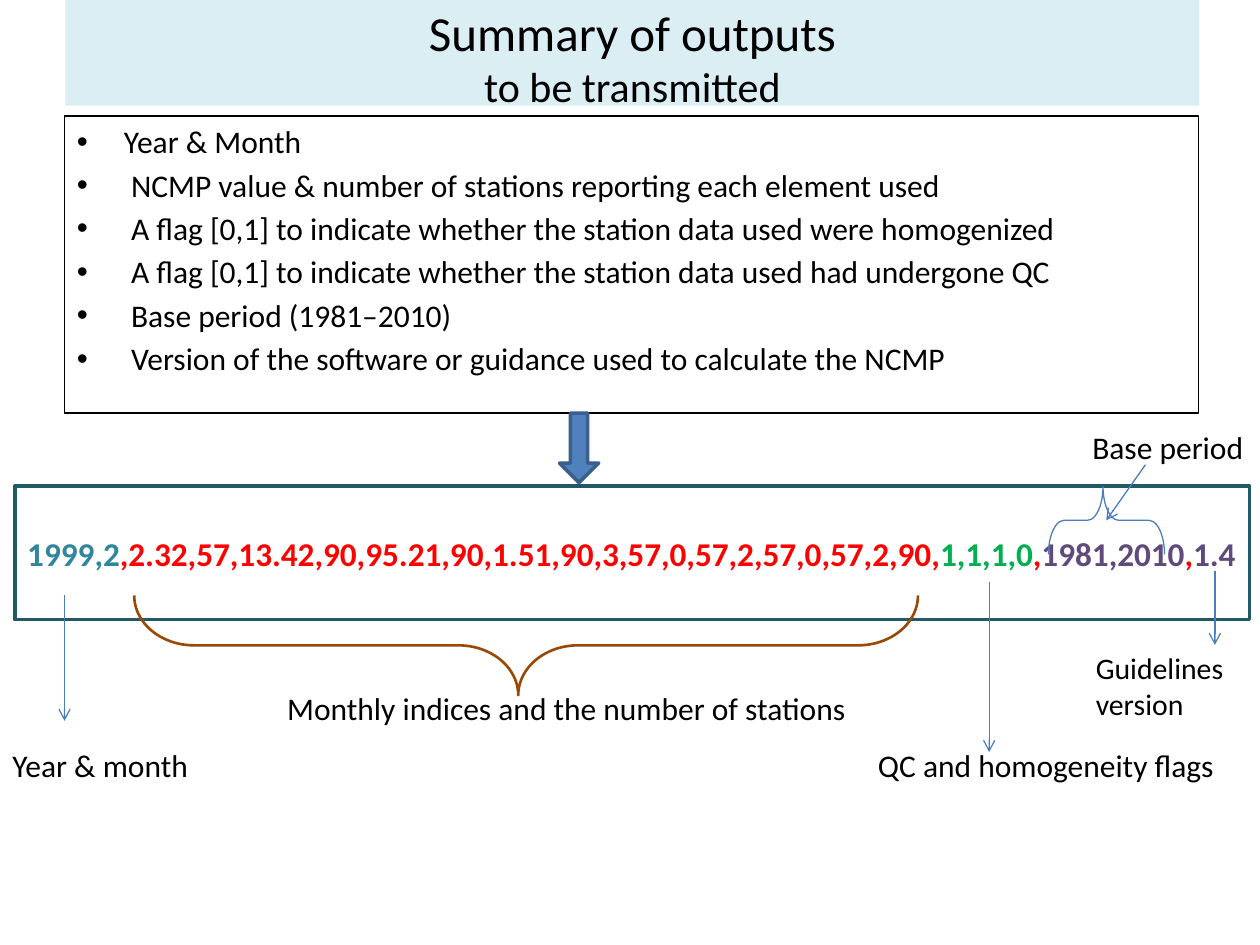
from lxml import etree
from pptx import Presentation
from pptx.dml.color import RGBColor
from pptx.enum.shapes import MSO_CONNECTOR, MSO_SHAPE
from pptx.enum.text import MSO_ANCHOR, PP_ALIGN
from pptx.oxml.ns import qn
from pptx.util import Cm, Pt

RECT = MSO_SHAPE.RECTANGLE
MID, TOP = MSO_ANCHOR.MIDDLE, MSO_ANCHOR.TOP
LEFT, CENTER = PP_ALIGN.LEFT, PP_ALIGN.CENTER
HEX = {
    "black": "000000", "pale": "DBEEF4", "frame": "215968", "teal": "31859C",
    "red": "FF0000", "green": "00B050", "violet": "604A7B", "brown": "984807",
    "blue": "4F81BD", "edge": "3A5F8C", "thin": "4B7EBC",
}
RGB = {name: RGBColor.from_string(code) for name, code in HEX.items()}

prs = Presentation()
prs.slide_width, prs.slide_height = Cm(25.4), Cm(19.05)
slide = prs.slides.add_slide(prs.slide_layouts[6])


def add_box(kind, place, fill=None, line=None, width=0.75, turn=0, adjust=()):
    """Add a preset shape; place is left, top, width, height in cm."""
    box = slide.shapes.add_shape(kind, *map(Cm, place))
    box.shadow.inherit = False
    box.rotation = turn
    for i, part in enumerate(adjust):
        box.adjustments[i] = part
    if fill:
        box.fill.solid()
        box.fill.fore_color.rgb = RGB[fill]
    else:
        box.fill.background()
    if line:
        box.line.color.rgb = RGB[line]
        box.line.width = Pt(width)
    else:
        box.line.fill.background()
    return box


def add_lines(frame, lines, anchor=TOP, align=LEFT):
    """Fill a text frame with (text, size) lines and return its paragraphs."""
    frame.vertical_anchor = anchor
    for i, (text, size) in enumerate(lines):
        para = frame.add_paragraph() if i else frame.paragraphs[0]
        para.text = text
        para.alignment = align
        para.font.name = "Calibri"
        para.font.size = Pt(size)
        para.font.color.rgb = RGB["black"]
    return frame.paragraphs


# Title
title = add_box(RECT, (1.32, 0, 22.86, 2.13), fill="pale").text_frame
title.margin_top, title.margin_bottom = Cm(0.16), Cm(0)
add_lines(title, [("Summary of outputs", 28), ("to be transmitted", 24)], MID, CENTER)

# List of outputs
items = [
    "Year & Month",
    " NCMP value & number of stations reporting each element used",
    " A flag [0,1] to indicate whether the station data used were homogenized",
    " A flag [0,1] to indicate whether the station data used had undergone QC",
    " Base period (1981–2010)",
    " Version of the software or guidance used to calculate the NCMP",
]
body = add_box(RECT, (1.3, 2.34, 22.86, 5.99), line="black").text_frame
for para in add_lines(body, [(item, 18) for item in items]):
    para.space_before = Pt(3.2)
    props = para._p.get_or_add_pPr()
    props.set("marL", str(Cm(0.95)))
    props.set("indent", str(-Cm(0.95)))
    font = etree.Element(qn("a:buFont"), typeface="Arial")
    mark = etree.Element(qn("a:buChar"), char="•")
    props.find(qn("a:defRPr")).addprevious(font)
    font.addnext(mark)

# Sample record
fields = [
    ("1999,2", "teal"),
    (",2.32,57,13.42,90,95.21,90,1.51,90,3,57,0,57,2,57,0,57,2,90,", "red"),
    ("1,1,1,0", "green"), (",", "red"),
    ("1981,2010", "violet"), (",", "red"), ("1.4", "violet"),
]
record = add_box(RECT, (0.3, 9.8, 24.89, 2.69), line="frame", width=2.25).text_frame
record.margin_right = Cm(0)
para = add_lines(record, [("", 19)], MID)[0]
para.font.bold = True
for text, color in fields:
    run = para.add_run()
    run.text = text
    run.font.color.rgb = RGB[color]

# Block arrow and braces
add_box(MSO_SHAPE.DOWN_ARROW, (11.28, 8.33, 0.79, 1.4), "blue", "edge", 2,
        adjust=(0.44, 0.5))
add_box(MSO_SHAPE.RIGHT_BRACE, (9.6, 5.11, 2.01, 15.8), line="brown", width=1.5,
        turn=90, adjust=(0.6, 0.51))
add_box(MSO_SHAPE.LEFT_BRACE, (21.62, 9.32, 1.37, 2.34), line="thin",
        turn=90, adjust=(0.23, 0.53))

# Labels
labels = [
    (["Monthly indices and the number of stations"], 18, (5.54, 13.77, 11.91, 1.02)),
    (["QC and homogeneity flags"], 18, (17.45, 14.91, 7.37, 1.02)),
    (["Year & month"], 18, (0, 14.91, 4.09, 1.02)),
    (["Base period"], 18, (21.77, 8.51, 3.58, 1.02)),
    (["Guidelines", "version"], 17, (21.84, 12.98, 3.23, 1.7)),
]
for words, size, place in labels:
    label = slide.shapes.add_textbox(*map(Cm, place)).text_frame
    label.word_wrap = False
    add_lines(label, [(word, size) for word in words])

# Pointers: start x, start y, end x, end y
pointers = [
    (19.94, 11.73, 19.94, 15.16),
    (1.3, 11.99, 1.3, 14.53),
    (23.09, 9.37, 22.3, 10.49),
    (24.49, 11.51, 24.49, 13),
]
for ends in pointers:
    link = slide.shapes.add_connector(MSO_CONNECTOR.STRAIGHT, *map(Cm, ends))
    link.line.color.rgb = RGB["thin"]
    link.line.width = Pt(0.75)
    props = link._element.spPr
    etree.SubElement(props.find(qn("a:ln")), qn("a:tailEnd"), type="arrow")
    etree.SubElement(props, qn("a:effectLst"))

prs.save("out.pptx")
